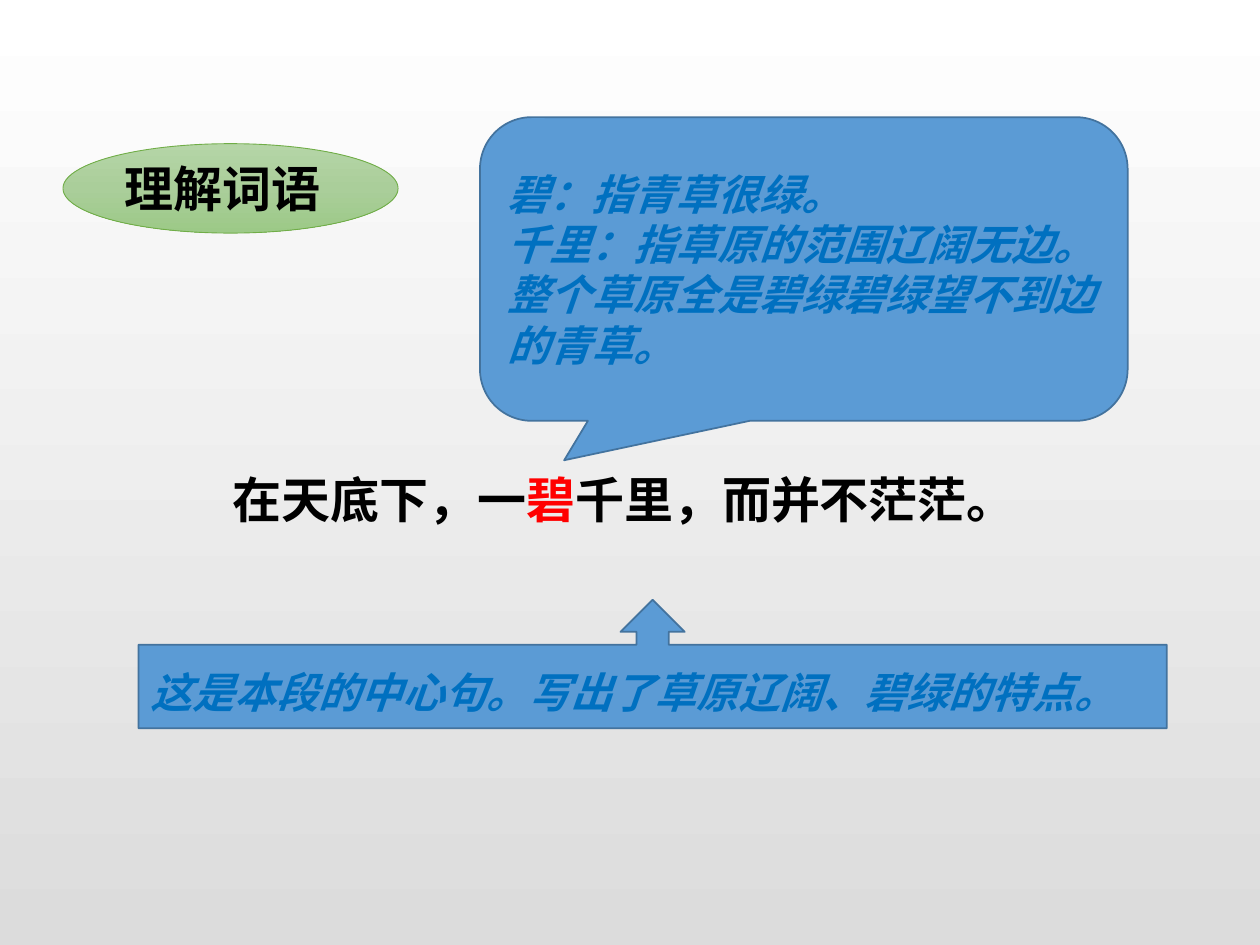
from copy import deepcopy

from lxml.etree import SubElement
from pptx import Presentation
from pptx.dml.color import RGBColor
from pptx.enum.shapes import MSO_SHAPE as Shape
from pptx.enum.text import MSO_ANCHOR as Anchor, PP_ALIGN as Align
from pptx.oxml.ns import qn
from pptx.util import Inches, Pt

FONT = "Noto Sans CJK SC"
COLORS = {
    "black": "000000", "red": "FF0000", "text_blue": "0070C0",
    "fill_blue": "5B9BD5", "line_blue": "43739E", "line_green": "70AD47",
    "white": "FFFFFF", "gray": "DCDCDC",
    "green_light": "B5D5A7", "green_mid": "AACE9A", "green_dark": "9CC987",
}
HEADING = {"size": Pt(28), "bold": True}
NOTE = {"size": Pt(24), "bold": True, "italic": True}


def color(name):
    return RGBColor.from_string(COLORS[name])


def set_gradient(fill, names):
    """Fill from top to bottom with evenly spaced colours."""
    fill.gradient()
    fill.gradient_angle = 270
    first = fill.gradient_stops[0]._gs
    for _ in names[2:]:
        first.addnext(deepcopy(first))
    for index, (stop, name) in enumerate(zip(fill.gradient_stops, names)):
        stop.position = index / (len(names) - 1)
        stop.color.rgb = color(name)


def write_text(frame, paragraphs, style, spacing=None):
    """Write paragraphs, each a list of (text, colour name) runs."""
    frame.word_wrap = True
    for index, runs in enumerate(paragraphs):
        paragraph = frame.add_paragraph() if index else frame.paragraphs[0]
        paragraph.alignment = Align.LEFT
        if spacing:
            paragraph.line_spacing = spacing
        for text, name in runs:
            run = paragraph.add_run()
            run.text = text
            for key, value in style.items():
                setattr(run.font, key, value)
            run.font.color.rgb = color(name)
            run.font.name = FONT
            SubElement(run._r.get_or_add_rPr(), qn("a:ea"), typeface=FONT)


def add_shape(slide, kind, box, line, width):
    shape = slide.shapes.add_shape(kind, *map(Inches, box))
    shape.shadow.inherit = False
    shape.line.color.rgb = color(line)
    shape.line.width = Pt(width)
    shape.text_frame.vertical_anchor = Anchor.MIDDLE
    return shape


def add_note(slide, kind, box, lines, adjustments=(), spacing=None):
    shape = add_shape(slide, kind, box, "line_blue", 1)
    shape.fill.solid()
    shape.fill.fore_color.rgb = color("fill_blue")
    for index, value in enumerate(adjustments):
        shape.adjustments[index] = value
    paragraphs = [[(line, "text_blue")] for line in lines]
    write_text(shape.text_frame, paragraphs, NOTE, spacing)


def add_label(slide, box, text):
    shape = add_shape(slide, Shape.OVAL, box, "line_green", 0.5)
    set_gradient(shape.fill, ["green_light", "green_mid", "green_dark"])
    write_text(shape.text_frame, [[(text, "black")]], HEADING)


def add_sentence(slide, box, runs):
    text_box = slide.shapes.add_textbox(*map(Inches, box))
    write_text(text_box.text_frame, [runs], HEADING, spacing=1.2)


def main():
    presentation = Presentation()
    presentation.slide_width = Inches(10)
    presentation.slide_height = Inches(7.5)
    slide = presentation.slides.add_slide(presentation.slide_layouts[6])
    set_gradient(slide.background.fill, ["white", "gray"])

    add_sentence(slide, (1.75, 3.58, 6.5, 0.59), [
        ("在天底下，一", "black"), ("碧", "red"), ("千里，而并不茫茫。", "black")])
    add_note(slide, Shape.ROUNDED_RECTANGULAR_CALLOUT, (3.81, 0.93, 5.14, 2.41), [
        "碧：指青草很绿。",
        "千里：指草原的范围辽阔无边。",
        "整个草原全是碧绿碧绿望不到边的青草。",
    ], adjustments=(-0.37, 0.63, 0.17))
    add_note(slide, Shape.UP_ARROW_CALLOUT, (1.1, 4.76, 8.16, 1.02),
             ["这是本段的中心句。写出了草原辽阔、碧绿的特点。"], spacing=1.2)
    add_label(slide, (0.5, 1.14, 2.66, 0.71), "理解词语")
    presentation.save("out.pptx")


if __name__ == "__main__":
    main()
